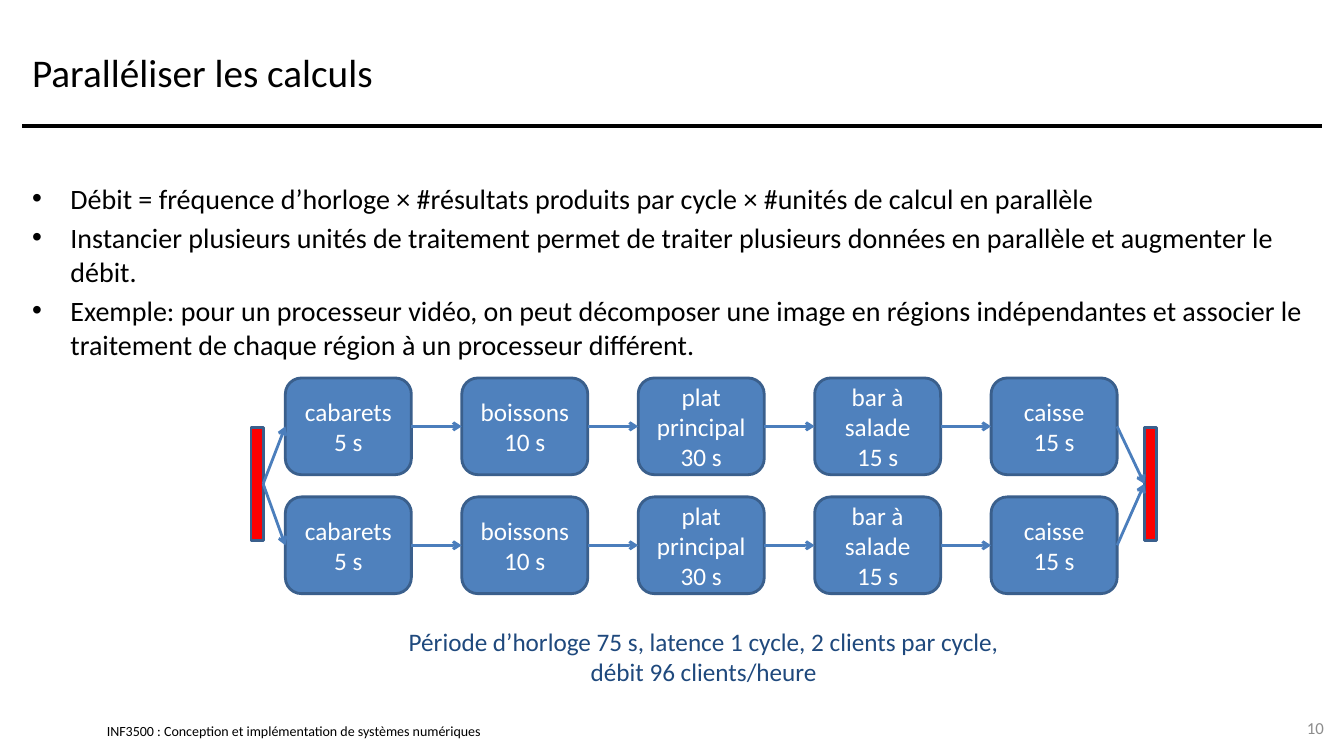
"""Build the slide on parallel computation with two cafeteria service lines."""
from typing import NamedTuple

from lxml import etree
from pptx import Presentation
from pptx.dml.color import RGBColor
from pptx.enum.shapes import MSO_CONNECTOR, MSO_SHAPE
from pptx.enum.text import MSO_ANCHOR, PP_ALIGN
from pptx.oxml.ns import qn
from pptx.util import Inches, Pt

STRAIGHT = MSO_CONNECTOR.STRAIGHT
RECTANGLE, ROUNDED = MSO_SHAPE.RECTANGLE, MSO_SHAPE.ROUNDED_RECTANGLE
TOP, MIDDLE = MSO_ANCHOR.TOP, MSO_ANCHOR.MIDDLE
LEFT, CENTER, RIGHT = PP_ALIGN.LEFT, PP_ALIGN.CENTER, PP_ALIGN.RIGHT
LEFT_SIDE, RIGHT_SIDE = 1, 3

BLACK = RGBColor(0x00, 0x00, 0x00)
WHITE = RGBColor(0xFF, 0xFF, 0xFF)
GREY = RGBColor(0x8C, 0x8C, 0x8C)
NAVY = RGBColor(0x1F, 0x49, 0x7D)
RED = RGBColor(0xFF, 0x00, 0x00)
BLUE = RGBColor(0x4F, 0x81, 0xBD)
OUTLINE = RGBColor(0x3A, 0x5F, 0x8C)
ARROW = RGBColor(0x4B, 0x7E, 0xBC)


class Frame(NamedTuple):
    left: float
    top: float
    width: float
    height: float

    def inches(self) -> list:
        return [Inches(length) for length in self]


class Label(NamedTuple):
    frame: Frame
    lines: list[str]
    size: int
    color: RGBColor = BLACK
    align: PP_ALIGN = LEFT
    anchor: MSO_ANCHOR = MIDDLE
    padded: bool = True
    bulleted: bool = False


class Station(NamedTuple):
    name: str
    duration: str


LABELS = [
    Label(Frame(1.06, 7.17, 5.11, 0.17),
          ["INF3500 : Conception et implémentation de systèmes numériques"],
          10, padded=False),
    Label(Frame(0.22, 0.17, 12.89, 1.08), ["Paralléliser les calculs"], 28),
    Label(Frame(0.22, 1.75, 12.89, 5.25), [
        "Débit = fréquence d’horloge × #résultats produits par cycle × #unités de calcul en parallèle",
        "Instancier plusieurs unités de traitement permet de traiter plusieurs données en parallèle "
        "et augmenter le débit.",
        "Exemple: pour un processeur vidéo, on peut décomposer une image en régions indépendantes "
        "et associer le traitement de chaque région à un processeur différent.",
    ], 20, anchor=TOP, bulleted=True),
    Label(Frame(12.56, 7.02, 0.67, 0.4), ["10"], 12, GREY, RIGHT),
    Label(Frame(2.61, 6.21, 8.74, 0.61),
          ["Période d’horloge 75 s, latence 1 cycle, 2 clients par cycle,",
           "débit 96 clients/heure"],
          18, NAVY, CENTER, padded=False),
]
STATIONS = [
    Station("cabarets", "5 s"),
    Station("boissons", "10 s"),
    Station("plat principal", "30 s"),
    Station("bar à salade", "15 s"),
    Station("caisse", "15 s"),
]
FIRST_STATION = Frame(2.83, 3.75, 1.25, 0.96)
STATION_PITCH, LINE_PITCH, LINE_COUNT = 1.75, 1.18, 2
ENTRY_REGISTER = Frame(2.49, 4.24, 0.12, 1.12)
EXIT_REGISTER = ENTRY_REGISTER._replace(left=11.35)


def add_bullet(paragraph) -> None:
    properties = paragraph._p.get_or_add_pPr()
    properties.set("marL", str(Inches(0.38)))
    properties.set("indent", str(-Inches(0.38)))
    etree.SubElement(properties, qn("a:buFont")).set("typeface", "Arial")
    etree.SubElement(properties, qn("a:buChar")).set("char", "•")


def write_lines(text_frame, lines: list[str], size: int, color: RGBColor,
                align: PP_ALIGN, bulleted: bool = False) -> None:
    for index, line in enumerate(lines):
        paragraph = text_frame.paragraphs[0] if index == 0 else text_frame.add_paragraph()
        paragraph.text = line
        paragraph.alignment = align
        if bulleted:
            paragraph.space_before = Pt(4 if index else 0)
            add_bullet(paragraph)
        for name, value in {"name": "Calibri", "size": Pt(size)}.items():
            setattr(paragraph.font, name, value)
        paragraph.font.color.rgb = color


def add_label(slide, label: Label) -> None:
    text_frame = slide.shapes.add_textbox(*label.frame.inches()).text_frame
    settings = {"word_wrap": True, "vertical_anchor": label.anchor}
    if not label.padded:
        settings |= dict.fromkeys(
            ("margin_left", "margin_top", "margin_right", "margin_bottom"), 0)
    for name, value in settings.items():
        setattr(text_frame, name, value)
    write_lines(text_frame, label.lines, label.size, label.color, label.align, label.bulleted)


def add_block(slide, preset: MSO_SHAPE, frame: Frame, fill: RGBColor):
    block = slide.shapes.add_shape(preset, *frame.inches())
    block.shadow.inherit = False
    block.fill.solid()
    block.fill.fore_color.rgb = fill
    block.line.color.rgb = OUTLINE
    block.line.width = Pt(2)
    return block


def add_station(slide, station: Station, frame: Frame):
    block = add_block(slide, ROUNDED, frame, BLUE)
    block.text_frame.word_wrap = True
    block.text_frame.vertical_anchor = MIDDLE
    write_lines(block.text_frame, list(station), 18, WHITE, CENTER)
    return block


def add_line(slide, ends: tuple, color: RGBColor, width: float):
    line = slide.shapes.add_connector(STRAIGHT, *(Inches(end) for end in ends))
    line.line.color.rgb = color
    line.line.width = Pt(width)
    etree.SubElement(line._element.spPr, qn("a:effectLst"))
    return line


def add_arrow(slide, source, target) -> None:
    arrow = add_line(slide, (0, 0, 0, 0), ARROW, 2)
    arrow.begin_connect(source, RIGHT_SIDE)
    arrow.end_connect(target, LEFT_SIDE)
    etree.SubElement(arrow.line._get_or_add_ln(), qn("a:tailEnd")).set("type", "arrow")


def add_service_line(slide, row: int, entry, exit_register) -> None:
    stops = [entry]
    for column, station in enumerate(STATIONS):
        frame = FIRST_STATION._replace(
            left=FIRST_STATION.left + column * STATION_PITCH,
            top=FIRST_STATION.top + row * LINE_PITCH)
        stops.append(add_station(slide, station, frame))
    stops.append(exit_register)
    for source, target in zip(stops, stops[1:]):
        add_arrow(slide, source, target)


def main() -> None:
    presentation = Presentation()
    presentation.slide_width = Inches(13.33)
    presentation.slide_height = Inches(7.5)
    slide = presentation.slides.add_slide(presentation.slide_layouts[6])
    add_line(slide, (0.22, 1.25, 13.11, 1.25), BLACK, 3)
    for label in LABELS:
        add_label(slide, label)
    entry, exit_register = (add_block(slide, RECTANGLE, frame, RED)
                            for frame in (ENTRY_REGISTER, EXIT_REGISTER))
    for row in range(LINE_COUNT):
        add_service_line(slide, row, entry, exit_register)
    presentation.save("out.pptx")


if __name__ == "__main__":
    main()
